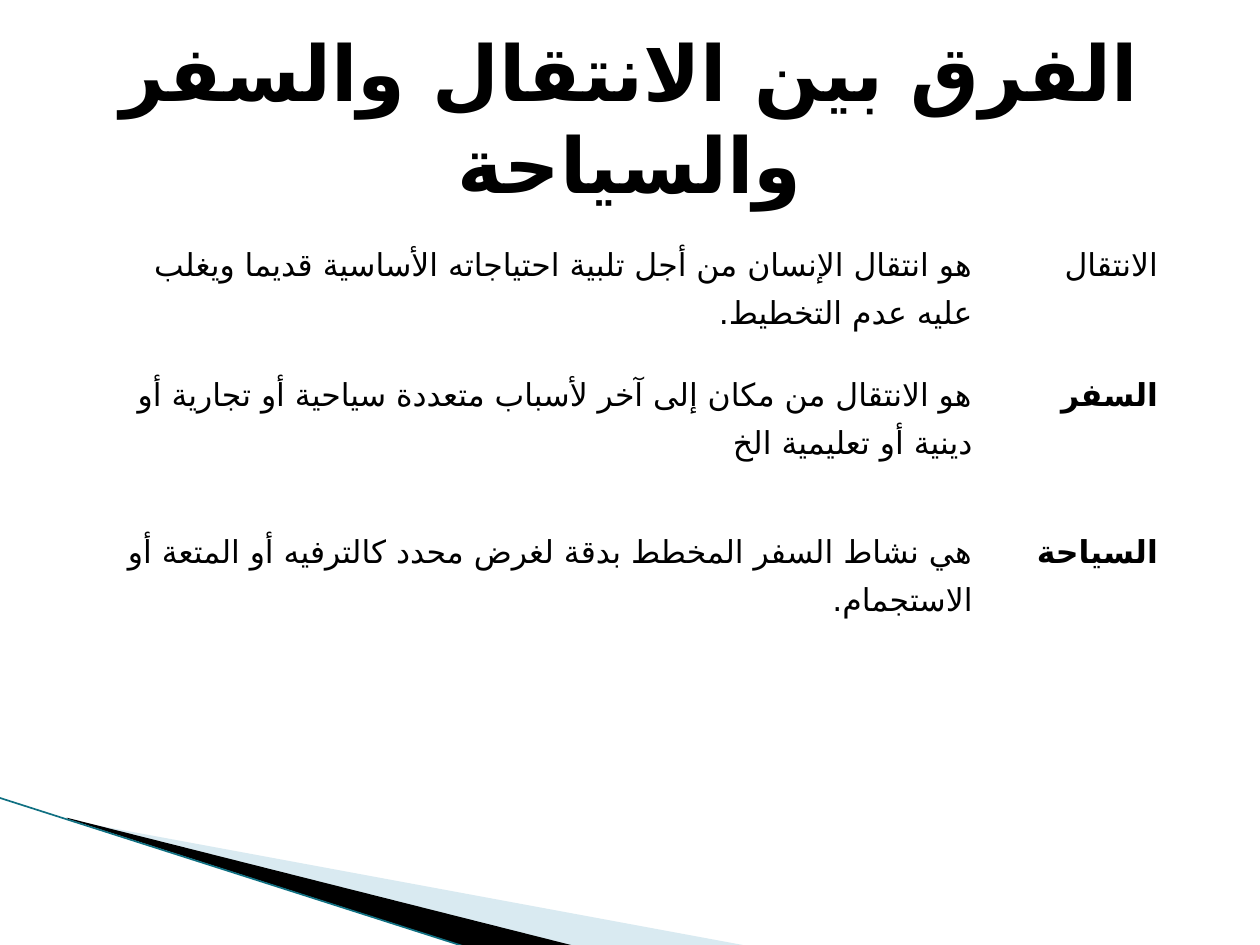
from collections import namedtuple

from pptx import Presentation
from pptx.dml.color import RGBColor
from pptx.enum.shapes import MSO_CONNECTOR
from pptx.enum.text import MSO_ANCHOR, PP_ALIGN
from pptx.oxml.ns import qn
from pptx.util import Inches, Pt
from lxml.etree import SubElement

Box = namedtuple("Box", "left top width height")

BLACK = RGBColor(0x00, 0x00, 0x00)
WHITE = RGBColor(0xFF, 0xFF, 0xFF)
PALE_BLUE = RGBColor(0xA0, 0xCB, 0xDC)
LINE_TEAL = RGBColor(0x10, 0x70, 0x82)
FONT = "Noto Sans Mono"
ARABIC_FONT = "DejaVu Sans"

TITLE = "الفرق بین الانتقال والسفر والسیاحة"
DEFINITIONS = [
    ("ھو انتقال الإنسان من أجل تلبیة احتیاجاته الأساسیة قدیما ویغلب علیه عدم التخطیط. ", "الانتقال ", False),
    ("ھو الانتقال من مكان إلى آخر لأسباب متعددة سیاحیة أو تجاریة أو دینیة أو تعلیمیة الخ", "السفر ", True),
    ("ھي نشاط السفر المخطط بدقة لغرض محدد كالترفیه أو المتعة أو الاستجمام. ", "السیاحة ", True),
]
COLUMN_WIDTHS = [7.19, 1.47]
ROW_HEIGHTS = [1.03, 1.25, 1.03]


def set_attributes(target, values):
    """Set every named value on the target."""
    for name, value in values.items():
        setattr(target, name, value)


def write_text(paragraph, text, size, bold):
    """Write one black span with its Latin and Arabic fonts."""
    span = paragraph.add_run()
    span.text = text
    set_attributes(span.font, {"name": FONT, "size": Pt(size), "bold": bold})
    span.font.color.rgb = BLACK
    SubElement(span.font._element, qn("a:cs"), typeface=ARABIC_FONT)


def add_wedge(page, box, points, color, alpha=None):
    """Draw a filled polygon from points relative to the box."""
    corners = [(Inches(box.left + x), Inches(box.top + y)) for x, y in points]
    builder = page.shapes.build_freeform(*corners[0])
    builder.add_line_segments(corners[1:])
    wedge = builder.convert_to_shape()
    wedge.shadow.inherit = False
    wedge.fill.solid()
    wedge.fill.fore_color.rgb = color
    wedge.line.fill.background()
    if alpha:
        color_element = wedge._element.spPr.find(".//" + qn("a:srgbClr"))
        SubElement(color_element, qn("a:alpha"), val=str(alpha * 1000))


def add_corner_decoration(page, box):
    """Draw the two wedges and the slanted line in the bottom corner."""
    add_wedge(page, box, [(0.56, 0.18), (5.96, 1.18), (4.57, 1.18), (0.56, 0.17)], PALE_BLUE, 40)
    add_wedge(page, box, [(0.54, 0.16), (4.58, 1.18), (3.73, 1.19), (0.55, 0.17)], BLACK)
    edge = page.shapes.add_connector(
        MSO_CONNECTOR.STRAIGHT, Inches(box.left), Inches(box.top),
        Inches(box.left + 3.72), Inches(box.top + box.height))
    edge.line.color.rgb = LINE_TEAL
    edge.line.width = Pt(0.95)
    SubElement(edge._element.spPr, qn("a:effectLst"))


def add_borders(cell, bottom_width):
    """Give a cell white borders on all four sides."""
    properties = cell._tc.get_or_add_tcPr()
    for side, width in {"L": 1, "R": 1, "T": 1, "B": bottom_width}.items():
        border = SubElement(properties, qn(f"a:ln{side}"), w=str(Pt(width)))
        fill = SubElement(border, qn("a:solidFill"))
        SubElement(fill, qn("a:srgbClr"), val=str(WHITE))


def fill_cell(cell, text, bold, bottom_width):
    """Format one right-to-left table cell and write its text."""
    add_borders(cell, bottom_width)
    cell.fill.solid()
    cell.fill.fore_color.rgb = WHITE
    set_attributes(cell, {
        "margin_left": Inches(0.04), "margin_top": Inches(0.01),
        "margin_right": Inches(0.08), "margin_bottom": 0,
        "vertical_anchor": MSO_ANCHOR.TOP,
    })
    paragraph = cell.text_frame.paragraphs[0]
    set_attributes(paragraph, {
        "alignment": PP_ALIGN.RIGHT, "line_spacing": 1.32, "space_after": Pt(1.4),
    })
    properties = paragraph._p.get_or_add_pPr()
    for name, value in {"marL": Inches(0.06), "indent": 0, "rtl": 1}.items():
        properties.set(name, str(value))
    write_text(paragraph, text, 18, bold)


def add_definitions(page, box):
    """Place the table of terms and their definitions."""
    frame = page.shapes.add_table(
        len(ROW_HEIGHTS), len(COLUMN_WIDTHS), *(Inches(value) for value in box))
    table = frame.table
    set_attributes(table, {"first_row": False, "horz_banding": False})
    for column, width in zip(table.columns, COLUMN_WIDTHS):
        column.width = Inches(width)
    for index, (definition, term, bold) in enumerate(DEFINITIONS):
        table.rows[index].height = Inches(ROW_HEIGHTS[index])
        bottom_width = 3 if index == 0 else 1
        fill_cell(table.cell(index, 0), definition, False, bottom_width)
        fill_cell(table.cell(index, 1), term, bold, bottom_width)


def add_title(page, box):
    """Move the title placeholder into the box and write the heading."""
    title = page.shapes.title
    set_attributes(title, {name: Inches(value) for name, value in box._asdict().items()})
    set_attributes(title.text_frame, {"word_wrap": True, "vertical_anchor": MSO_ANCHOR.MIDDLE})
    paragraph = title.text_frame.paragraphs[0]
    paragraph.alignment = PP_ALIGN.CENTER
    paragraph._p.get_or_add_pPr().set("rtl", "1")
    write_text(paragraph, TITLE, 44, True)


def main():
    """Build the slide and save the deck."""
    deck = Presentation()
    set_attributes(deck, {"slide_width": Inches(10), "slide_height": Inches(7.5)})
    page = deck.slides.add_slide(deck.slide_layouts[5])
    add_corner_decoration(page, Box(-0.01, 6.33, 5.96, 1.19))
    add_definitions(page, Box(0.67, 1.86, 8.66, 3.31))
    add_title(page, Box(0.5, 0.3, 9, 1.25))
    deck.save("out.pptx")


if __name__ == "__main__":
    main()
